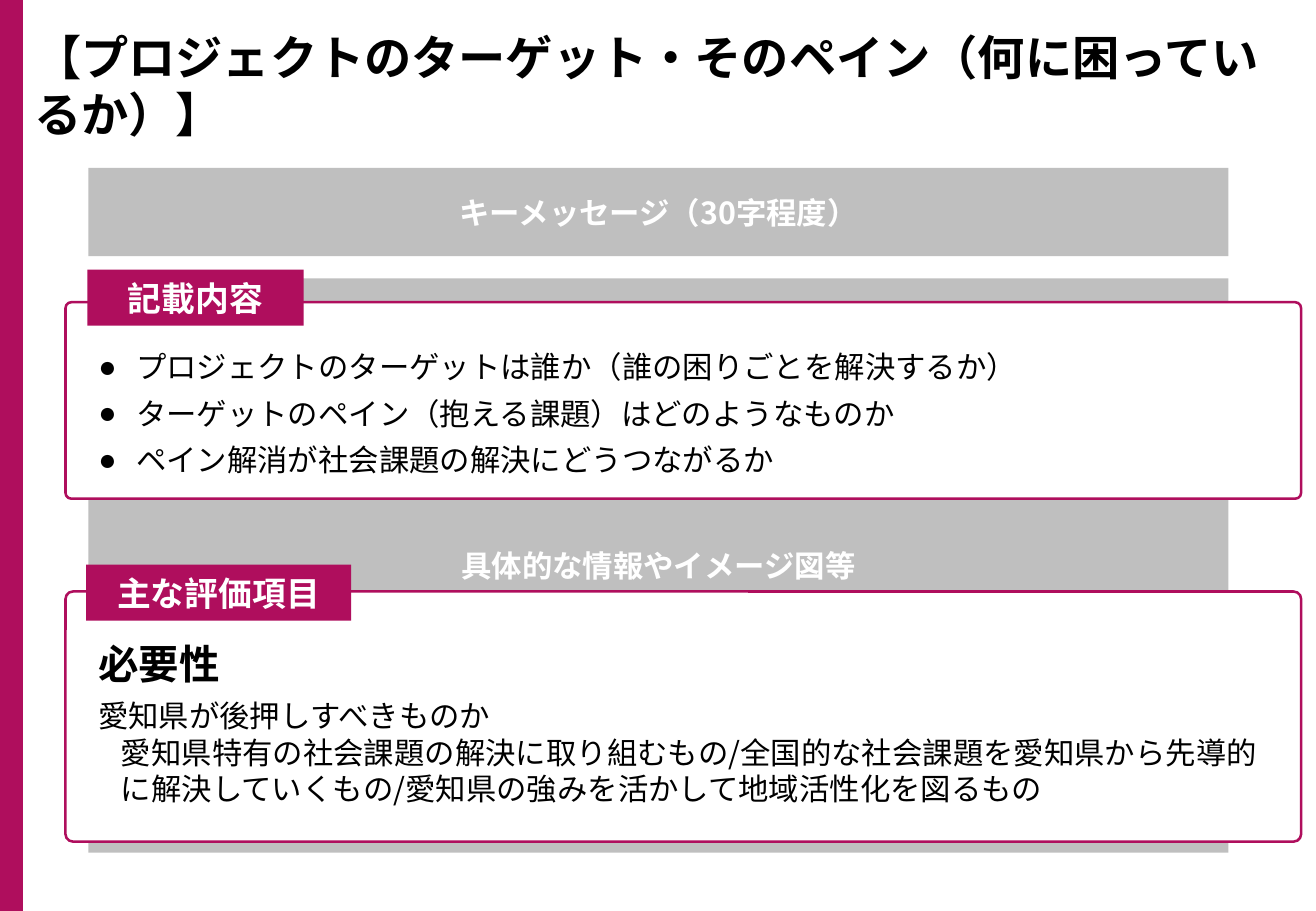
from lxml import etree
from pptx import Presentation
from pptx.dml.color import RGBColor
from pptx.enum.shapes import MSO_SHAPE
from pptx.enum.text import MSO_ANCHOR, MSO_AUTO_SIZE, PP_ALIGN
from pptx.oxml.ns import qn
from pptx.util import Cm, Pt

RECTANGLE = MSO_SHAPE.RECTANGLE
ROUNDED = MSO_SHAPE.ROUNDED_RECTANGLE
TOP, MIDDLE = MSO_ANCHOR.TOP, MSO_ANCHOR.MIDDLE
LEFT, CENTER, JUSTIFY = PP_ALIGN.LEFT, PP_ALIGN.CENTER, PP_ALIGN.JUSTIFY
NO_AUTOFIT = MSO_AUTO_SIZE.NONE

FONT = "Noto Sans CJK JP"
MAGENTA = RGBColor(0xAF, 0x0E, 0x5D)
GRAY = RGBColor(0xBF, 0xBF, 0xBF)
WHITE = RGBColor(0xFF, 0xFF, 0xFF)
BLACK = RGBColor(0, 0, 0)

PAGE_WIDTH, PAGE_HEIGHT = 27.51, 19.05
TARGET_ITEMS = [
    "プロジェクトのターゲットは誰か（誰の困りごとを解決するか）",
    "ターゲットのペイン（抱える課題）はどのようなものか",
    "ペイン解消が社会課題の解決にどうつながるか",
]


def add_run(paragraph, text, size, color=BLACK, bold=False):
    run = paragraph.add_run()
    run.text = text
    font = run.font
    font.size, font.bold, font.name = Pt(size), bold, FONT
    font.color.rgb = color
    east_asian = etree.SubElement(run._r.get_or_add_rPr(), qn("a:ea"))
    east_asian.set("typeface", FONT)


def set_indent(paragraph, margin, indent=0.0, bullet=None):
    properties = paragraph._p.get_or_add_pPr()
    properties.set("marL", str(Cm(margin)))
    properties.set("indent", str(Cm(indent)))
    if bullet:
        etree.SubElement(properties, qn("a:buChar")).set("char", bullet)


def add_block(slide, kind, box, fill, line=None):
    shape = slide.shapes.add_shape(kind, *map(Cm, box))
    shape.shadow.inherit = False
    shape.fill.solid()
    shape.fill.fore_color.rgb = fill
    if line is None:
        shape.line.fill.background()
    else:
        shape.line.color.rgb = line
        shape.line.width = Pt(1.5)
    return shape


def add_label(slide, box, fill, text, size):
    shape = add_block(slide, RECTANGLE, box, fill)
    shape.text_frame.vertical_anchor = MIDDLE
    paragraph = shape.text_frame.paragraphs[0]
    paragraph.alignment = CENTER
    add_run(paragraph, text, size, WHITE, True)


def place_text(shape, box):
    """Move a text shape to its box and return its top-anchored frame."""
    shape.left, shape.top, shape.width, shape.height = map(Cm, box)
    frame = shape.text_frame
    frame.word_wrap = True
    frame.auto_size = NO_AUTOFIT
    frame.vertical_anchor = TOP
    return frame


def add_title(slide, box):
    paragraph = place_text(slide.shapes.title, box).paragraphs[0]
    paragraph.alignment = LEFT
    add_run(paragraph, "【プロジェクトのターゲット・そのペイン（何に困っているか）】", 28, bold=True)


def add_panel(slide, box, tab_offset, tab_width, heading):
    """Outlined panel with a heading tab across its top edge."""
    left, top, _, _ = box
    panel = add_block(slide, ROUNDED, box, WHITE, MAGENTA)
    panel.adjustments[0] = 0.03
    tab_x, tab_y = tab_offset
    add_label(slide, (left + tab_x, top + tab_y, tab_width, 1.17), MAGENTA, heading, 20)


def add_content_panel(slide, box):
    left, top, width, height = box
    add_panel(slide, box, (0.46, -0.68), 4.52, "記載内容")
    # The list placeholder goes in front of the panel
    body = slide.placeholders[1]
    body.element.getparent().append(body.element)
    frame = place_text(body, (left + 0.43, top + 0.84, width - 0.79, height - 1.11))
    for index, item in enumerate(TARGET_ITEMS):
        paragraph = frame.add_paragraph() if index else frame.paragraphs[0]
        set_indent(paragraph, 0.79, -0.79, "●")
        paragraph.space_before = Pt(6 if index else 0)
        add_run(paragraph, item, 18)


def add_criteria_panel(slide, box):
    left, top, width, height = box
    add_panel(slide, box, (0.43, -0.56), 5.54, "主な評価項目")
    text_box = (left + 0.43, top + 0.86, width - 0.79, height - 1.37)
    frame = place_text(slide.shapes.add_textbox(*map(Cm, text_box)), text_box)
    add_run(frame.paragraphs[0], "必要性", 24, bold=True)
    question = frame.add_paragraph()
    question.alignment = JUSTIFY
    question.space_before = Pt(6)
    add_run(question, "愛知県が後押しすべきものか", 18)
    detail = frame.add_paragraph()
    set_indent(detail, 0.48)
    add_run(
        detail,
        "愛知県特有の社会課題の解決に取り組むもの/全国的な社会課題を愛知県から"
        "先導的に解決していくもの/愛知県の強みを活かして地域活性化を図るもの",
        18,
    )


def main():
    presentation = Presentation()
    presentation.slide_width = Cm(PAGE_WIDTH)
    presentation.slide_height = Cm(PAGE_HEIGHT)
    slide = presentation.slides.add_slide(presentation.slide_layouts[1])

    # Side band and title
    add_block(slide, RECTANGLE, (0, 0, 0.48, PAGE_HEIGHT), MAGENTA)
    add_title(slide, (0.46, 0.46, 27.05, 1.45))

    # Gray areas to fill in
    add_label(slide, (1.85, 3.51, 23.83, 1.85), GRAY, "キーメッセージ（30字程度）", 18)
    add_label(slide, (1.85, 5.82, 23.83, 12.01), GRAY, "具体的な情報やイメージ図等", 18)

    # Guidance panels
    add_criteria_panel(slide, (1.37, 12.37, 25.83, 5.23))
    add_content_panel(slide, (1.37, 6.32, 25.83, 4.11))

    presentation.save("out.pptx")


if __name__ == "__main__":
    main()
